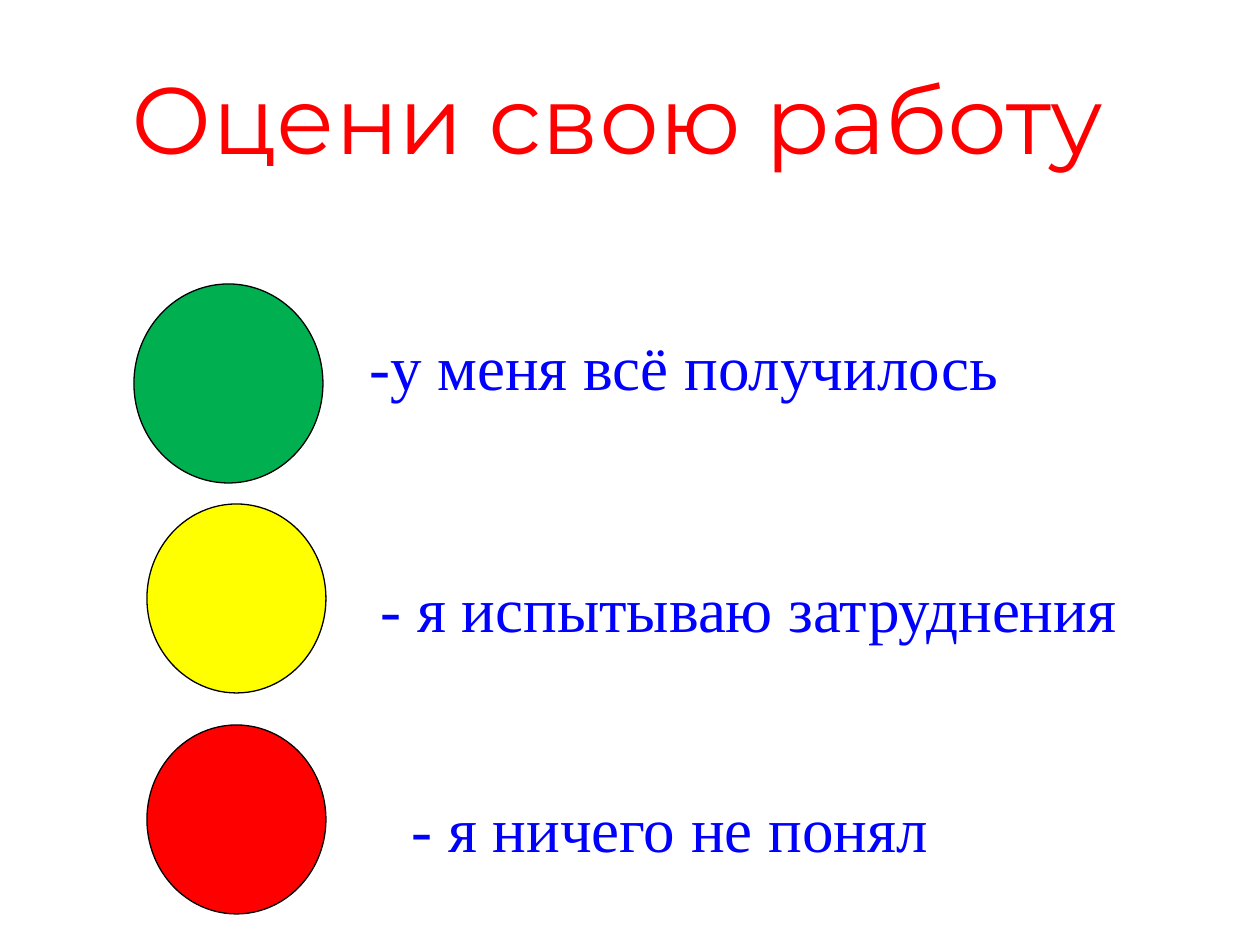
from pptx import Presentation
from pptx.dml.color import RGBColor
from pptx.enum.shapes import MSO_SHAPE
from pptx.enum.text import MSO_ANCHOR, PP_ALIGN
from pptx.util import Pt

OVAL = MSO_SHAPE.OVAL
TOP, MIDDLE = MSO_ANCHOR.TOP, MSO_ANCHOR.MIDDLE
LEFT, CENTER = PP_ALIGN.LEFT, PP_ALIGN.CENTER
PX = 914400 // 126

TITLE = ("Оцени свою работу ", (63, 38, 1134, 157))
RATINGS = [
    ("-у меня всё получилось", (357, 315, 746, 72), "00B050", (134, 284, 189, 199)),
    ("- я испытываю затруднения", (368, 557, 766, 72), "FFFF00", (147, 504, 179, 189)),
    ("- я ничего не понял", (399, 777, 714, 53), "FF0000", (147, 725, 179, 189)),
]


def emu(box):
    return [v * PX for v in box]


def color(value):
    return RGBColor.from_string(value)


def add_text(slide, text, box, font, size, fill, align=LEFT, anchor=TOP, inset=6):
    tf = slide.shapes.add_textbox(*emu(box)).text_frame
    tf.word_wrap = True
    tf.vertical_anchor = anchor
    tf.margin_top = inset * PX
    p = tf.paragraphs[0]
    p.alignment = align
    r = p.add_run()
    r.text = text
    r.font.name = font
    r.font.size = Pt(size)
    r.font.color.rgb = color(fill)


def add_light(slide, box, fill):
    sp = slide.shapes.add_shape(OVAL, *emu(box))
    sp.shadow.inherit = False
    sp.fill.solid()
    sp.fill.fore_color.rgb = color(fill)
    sp.line.color.rgb = color("000000")
    sp.line.width = Pt(0.75)


def main():
    prs = Presentation()
    prs.slide_width, prs.slide_height = emu((1260, 945))
    s = prs.slides.add_slide(prs.slide_layouts[6])
    add_text(s, *TITLE, "Montserrat", 54, "FF0000", CENTER, MIDDLE)
    for text, text_box, fill, light_box in RATINGS:
        add_light(s, light_box, fill)
        add_text(s, text, text_box, "Times New Roman", 36, "0000FF", inset=13)
    prs.save("out.pptx")


if __name__ == "__main__":
    main()
